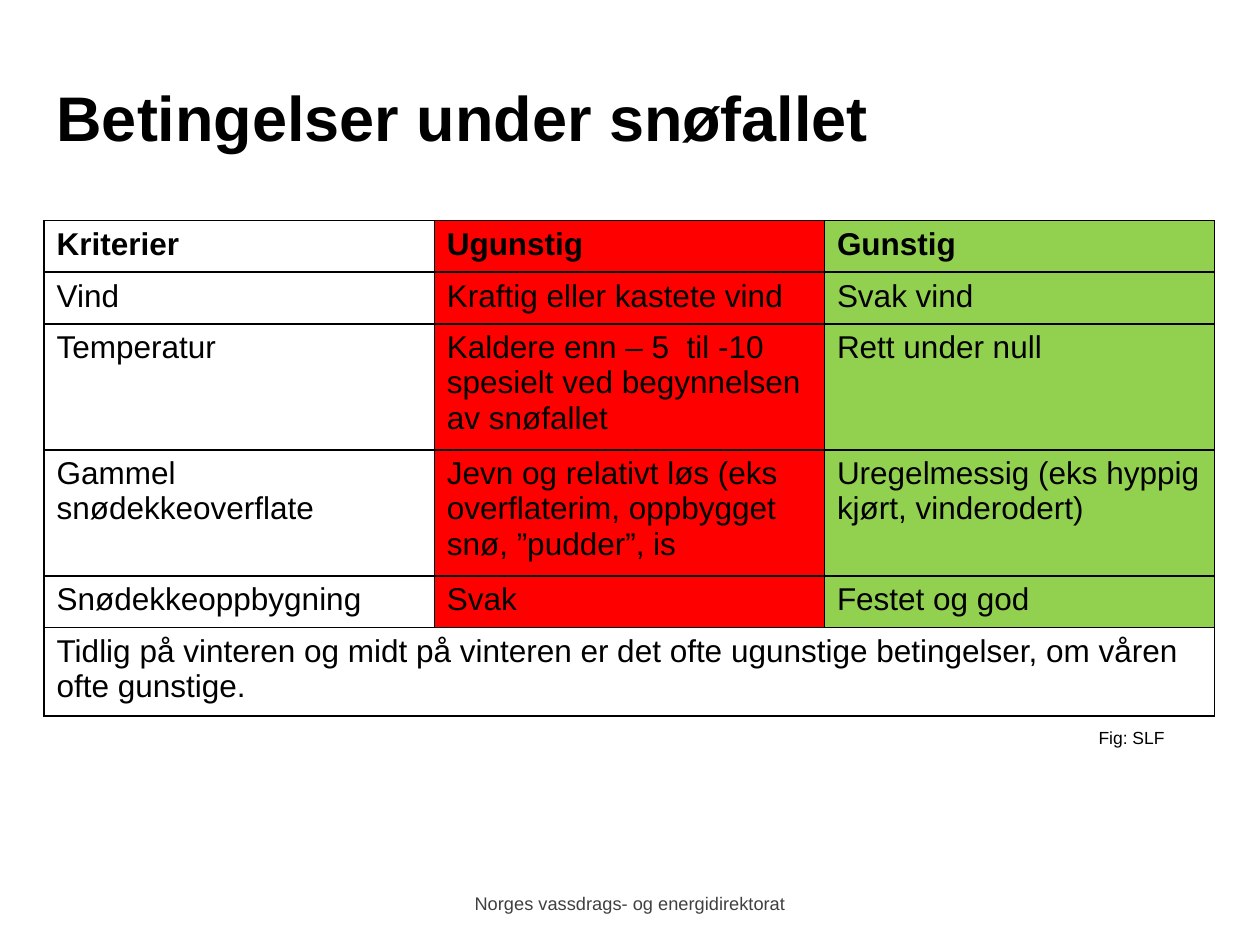
"""Build the slide on snowfall conditions with its criteria table."""
from lxml.etree import SubElement
from pptx import Presentation
from pptx.dml.color import RGBColor
from pptx.enum.text import MSO_ANCHOR, PP_ALIGN
from pptx.oxml.ns import qn
from pptx.util import Inches, Pt

COLORS = {"black": "000000", "gray": "404040", "unfavorable": "FF0000", "favorable": "92D050"}


def write(frame, text, size=18, bold=False, color="black", align=PP_ALIGN.LEFT, anchor=MSO_ANCHOR.TOP):
    frame.word_wrap = True
    frame.vertical_anchor = anchor
    paragraph = frame.paragraphs[0]
    paragraph.alignment = align
    run = paragraph.add_run()
    run.text = text
    run.font.name = "Arial"
    run.font.size = Pt(size)
    run.font.bold = bold
    run.font.color.rgb = RGBColor.from_string(COLORS[color])
    return run


def set_borders(cell):
    properties = cell._tc.get_or_add_tcPr()
    for position, side in enumerate(("a:lnL", "a:lnR", "a:lnT", "a:lnB")):
        line = SubElement(properties, qn(side), w=str(Pt(1)))
        properties.insert(position, line)
        fill = SubElement(line, qn("a:solidFill"))
        SubElement(fill, qn("a:srgbClr"), val=COLORS["black"])


presentation = Presentation()
presentation.slide_width = Inches(10)
presentation.slide_height = Inches(7.5)
slide = presentation.slides.add_slide(presentation.slide_layouts[6])

footer = slide.shapes.add_textbox(Inches(2.5), Inches(6.97), Inches(5), Inches(0.3)).text_frame
footer.margin_top = Inches(0.08)
agency = write(footer, "Norges vassdrags- og energidirektorat", color="gray", align=PP_ALIGN.CENTER)
agency._r.get_or_add_rPr().set("baseline", "30000")

title = slide.shapes.add_textbox(Inches(0.35), Inches(0.3), Inches(9.29), Inches(1.25)).text_frame
write(title, "Betingelser under snøfallet", size=36, bold=True, anchor=MSO_ANCHOR.MIDDLE)

criteria = [
    ("Kriterier", "Ugunstig", "Gunstig"),
    ("Vind", "Kraftig eller kastete vind", "Svak vind"),
    ("Temperatur", "Kaldere enn – 5  til -10 spesielt ved begynnelsen av snøfallet", "Rett under null"),
    (
        "Gammel snødekkeoverflate",
        "Jevn og relativt løs (eks overflaterim, oppbygget snø, ”pudder”, is",
        "Uregelmessig (eks hyppig kjørt, vinderodert)",
    ),
    ("Snødekkeoppbygning", "Svak", "Festet og god"),
    ("Tidlig på vinteren og midt på vinteren er det ofte ugunstige betingelser, om våren ofte gunstige.",),
]
column_fills = (None, "unfavorable", "favorable")
table = slide.shapes.add_table(
    len(criteria), len(column_fills), Inches(0.35), Inches(1.75), Inches(9.29), Inches(3.92)
).table
table.first_row = False
table.horz_banding = False
for row in table.rows:
    row.height = Inches(0.41)

summary_row = len(criteria) - 1
table.cell(summary_row, 0).merge(table.cell(summary_row, 2))
for row_index, texts in enumerate(criteria):
    for column_index, fill_name in enumerate(column_fills):
        cell = table.cell(row_index, column_index)
        if fill_name and row_index < summary_row:
            cell.fill.solid()
            cell.fill.fore_color.rgb = RGBColor.from_string(COLORS[fill_name])
        else:
            cell.fill.background()
        set_borders(cell)
        if column_index < len(texts):
            write(cell.text_frame, texts[column_index], bold=row_index == 0)

credit = slide.shapes.add_textbox(Inches(8.62), Inches(5.72), Inches(1.81), Inches(0.27)).text_frame
write(credit, "Fig: SLF", size=10)

presentation.save("out.pptx")
